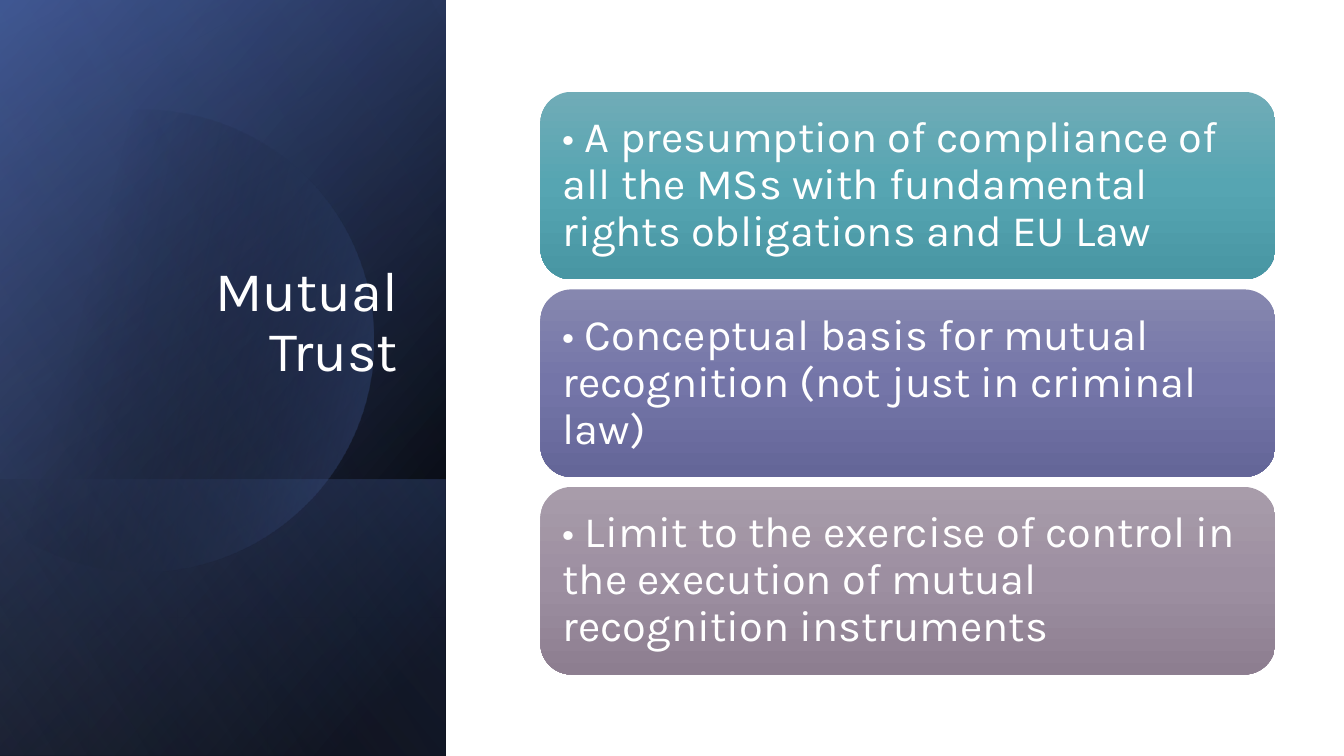
from math import acos, cos, sin
from pptx import Presentation
from pptx.dml.color import RGBColor
from pptx.enum.shapes import MSO_SHAPE
from pptx.enum.text import MSO_ANCHOR, MSO_AUTO_SIZE, PP_ALIGN
from pptx.oxml import parse_xml
from pptx.oxml.ns import nsdecls, qn
from pptx.util import Pt

RECT, ROUND = MSO_SHAPE.RECTANGLE, MSO_SHAPE.ROUNDED_RECTANGLE
LEFT, RIGHT = PP_ALIGN.LEFT, PP_ALIGN.RIGHT
MIDDLE, BOTTOM = MSO_ANCHOR.MIDDLE, MSO_ANCHOR.BOTTOM
FIXED = MSO_AUTO_SIZE.NONE
FONT, WHITE = "Karla", "FFFFFF"

TITLE = "Mutual Trust"
CARDS = [
    ("• A presumption of compliance of all the MSs with fundamental rights obligations and EU Law",
     ("70ACB7", "56A5B2", "4896A3")),
    ("• Conceptual basis for mutual recognition (not just in criminal law)",
     ("8687AF", "7475A8", "646698")),
    ("• Limit to the exercise of control in the execution of mutual recognition instruments",
     ("A89CAA", "9D8FA1", "8D7E90")),
]
WIDE, HIGH, PANEL = 960, 540, 318.5
BASE = (0, [(8, "000000", 100), (100, "384C81", 100)], 50)
GLOW = (0, [(0, "000000", 0), (99, "4A66AC", 46)], 30)
FOOT = (342.8, [(2, "4A66AC", 29), (100, "000000", 30)], 130)
SHEEN = (0, [(0, "000000", 0), (99, "90A2CF", 11)], 120)
DISC = ([(29, "000000", 0), (100, "4A66AC", 43)], 14)
DISC_X, DISC_Y, DISC_R, DISC_CUT = 101.5, 243.5, 165, -11
CARD_X, CARD_Y, CARD_W, CARD_H, CARD_STEP = 386, 65.6, 525, 134, 141.1


def color(code):
    return RGBColor.from_string(code)


def shade(shape, stops, angle):
    marks = "".join(
        f'<a:gs pos="{pos * 1000}"><a:srgbClr val="{color(code)}">'
        f'<a:alpha val="{alpha * 1000}"/></a:srgbClr></a:gs>'
        for pos, code, alpha in stops)
    grad = parse_xml(
        f'<a:gradFill {nsdecls("a")} rotWithShape="1"><a:gsLst>{marks}</a:gsLst>'
        f'<a:lin ang="{angle * 60000}" scaled="0"/></a:gradFill>')
    shape.fill.background()
    props = shape._element.spPr
    props.replace(props.find(qn("a:noFill")), grad)
    shape.line.fill.background()
    shape.shadow.inherit = False


def layer(top, stops, angle):
    high = HIGH - top
    shape = slide.shapes.add_shape(
        RECT, Pt((PANEL - high) / 2), Pt(top + (high - PANEL) / 2), Pt(high), Pt(PANEL))
    shape.rotation = 90
    shape._element.spPr.find(qn("a:xfrm")).set("flipH", "1")
    shade(shape, stops, angle)


def disc(stops, angle):
    end = acos((DISC_CUT - DISC_X) / DISC_R)
    turns = [end * (step / 60 - 1) for step in range(121)]
    dots = [(Pt(DISC_X + DISC_R * cos(turn)), Pt(DISC_Y + DISC_R * sin(turn)))
            for turn in turns]
    path = slide.shapes.build_freeform(*dots[0])
    path.add_line_segments(dots[1:], close=True)
    shade(path.convert_to_shape(), stops, angle)


def write(shape, text, size, align, anchor, pads):
    frame = shape.text_frame
    frame.word_wrap = True
    frame.auto_size = FIXED
    frame.vertical_anchor = anchor
    frame.margin_left, frame.margin_top, frame.margin_right, frame.margin_bottom = map(Pt, pads)
    para = frame.paragraphs[0]
    para.alignment = align
    para.line_spacing = 0.9
    run = para.add_run()
    run.text = text
    run.font.name = FONT
    run.font.size = Pt(size)
    run.font.color.rgb = color(WHITE)


deck = Presentation()
deck.slide_width, deck.slide_height = Pt(WIDE), Pt(HIGH)
slide = deck.slides.add_slide(deck.slide_layouts[5])

layer(*BASE)
layer(*GLOW)
layer(*FOOT)
disc(*DISC)
layer(*SHEEN)

title = slide.shapes.title
slide.shapes._spTree.append(title._element)
title.left, title.top, title.width, title.height = Pt(46), Pt(132.5), Pt(245.5), Pt(188.6)
write(title, TITLE, 40, RIGHT, BOTTOM, (7.2, 3.6, 7.2, 47))

for row, (text, tones) in enumerate(CARDS):
    card = slide.shapes.add_shape(
        ROUND, Pt(CARD_X), Pt(CARD_Y + row * CARD_STEP), Pt(CARD_W), Pt(CARD_H))
    shade(card, [(50 * k, tone, 100) for k, tone in enumerate(tones)], 90)
    write(card, text, 31, LEFT, MIDDLE, (9.4, 9.4, 9.4, 9.4))

deck.save("out.pptx")
